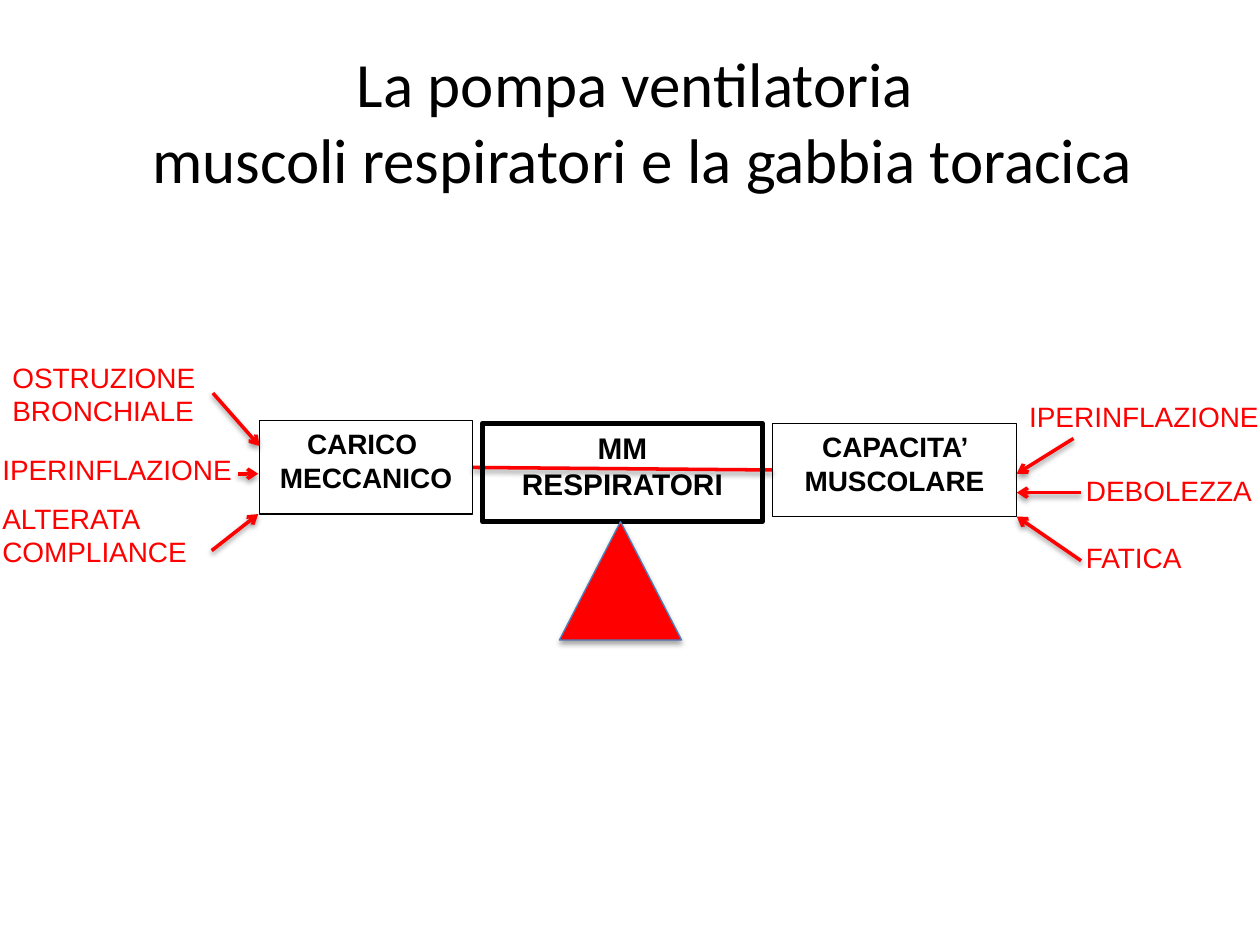
from lxml.etree import SubElement
from pptx import Presentation
from pptx.dml.color import RGBColor
from pptx.enum.shapes import MSO_CONNECTOR, MSO_SHAPE
from pptx.enum.text import MSO_ANCHOR, MSO_AUTO_SIZE, PP_ALIGN
from pptx.oxml.ns import qn
from pptx.util import Inches, Pt

BLACK = RGBColor(0x00, 0x00, 0x00)
RED = RGBColor(0xFF, 0x00, 0x00)
BLUE = RGBColor(0x4B, 0x7E, 0xBC)

TITLE = ("La pompa ventilatoria", " muscoli respiratori e la gabbia toracica")

# paragraphs, (left, top, width, height), text size, line width
BOXES = [
    (["MM RESPIRATORI"], (3.83, 3.36, 2.22, 0.78), 17, 3),
    (["CARICO ", "MECCANICO"], (2.06, 3.34, 1.69, 0.74), 16, 0.75),
    (["CAPACITA’ MUSCOLARE"], (6.13, 3.36, 1.94, 0.74), 16, 0.75),
]

# text, (left, top, width, height)
LABELS = [
    ("IPERINFLAZIONE", (-0.08, 3.54, 2.34, 0.43)),
    ("ALTERATA COMPLIANCE", (-0.08, 3.93, 2.34, 0.74)),
    ("OSTRUZIONE BRONCHIALE", (0, 2.81, 2.34, 0.74)),
    ("IPERINFLAZIONE", (8.07, 3.12, 2.14, 0.43)),
    ("DEBOLEZZA", (8.52, 3.71, 1.68, 0.43)),
    ("FATICA", (8.52, 4.24, 1.17, 0.43)),
]

BEAM = (3.75, 3.71, 6.13, 3.73)
FULCRUM = (4.44, 4.14, 0.97, 0.94)

# from x, from y, to x, to y
ARROWS = [
    (1.69, 3.12, 2.06, 3.54),
    (1.68, 4.37, 2.05, 4.08),
    (1.89, 3.76, 2.05, 3.76),
    (8.58, 3.91, 8.07, 3.91),
    (8.52, 3.48, 8.07, 3.76),
    (8.58, 4.45, 8.07, 4.10),
]


def inches(values):
    return [Inches(value) for value in values]


def add_span(para, text, size, color, font="Arial", bold=False):
    span = para.add_run()
    span.text = text
    span.font.name = font
    span.font.size = Pt(size)
    span.font.bold = bold
    span.font.color.rgb = color


def fill_frame(frame, paragraphs, size, color, align, bold=False):
    frame.word_wrap = True
    frame.vertical_anchor = MSO_ANCHOR.TOP
    for index, text in enumerate(paragraphs):
        para = frame.add_paragraph() if index else frame.paragraphs[0]
        para.alignment = align
        add_span(para, text, size, color, bold=bold)


def add_shadow(shape, opacity):
    """Soft shadow straight below; opacity in percent."""
    effects = SubElement(shape._element.spPr, qn("a:effectLst"))
    shadow = SubElement(effects, qn("a:outerShdw"), blurRad=str(Pt(3.1)),
                        dist=str(Pt(1.7)), dir="5400000", rotWithShape="0")
    color = SubElement(shadow, qn("a:srgbClr"), val=str(BLACK))
    SubElement(color, qn("a:alpha"), val=str(opacity * 1000))


def add_line(slide, ends, arrow=False):
    line = slide.shapes.add_connector(MSO_CONNECTOR.STRAIGHT, *inches(ends))
    line.line.color.rgb = RED
    line.line.width = Pt(2)
    if arrow:
        SubElement(line.line._get_or_add_ln(), qn("a:tailEnd"), type="arrow")
    add_shadow(line, 38)


def add_title(slide):
    title = slide.shapes.title
    title.left, title.top, title.width, title.height = inches((0.54, 0.33, 9, 1.25))
    frame = title.text_frame
    frame.auto_size = MSO_AUTO_SIZE.NONE
    frame.vertical_anchor = MSO_ANCHOR.MIDDLE
    para = frame.paragraphs[0]
    para.alignment = PP_ALIGN.CENTER
    for index, text in enumerate(TITLE):
        if index:
            para.add_line_break()
        add_span(para, text, 36, BLACK, font="Calibri")


def add_box(slide, paragraphs, place, size, line_width):
    box = slide.shapes.add_shape(MSO_SHAPE.RECTANGLE, *inches(place))
    box.shadow.inherit = False
    box.fill.background()
    box.line.color.rgb = BLACK
    box.line.width = Pt(line_width)
    fill_frame(box.text_frame, paragraphs, size, BLACK, PP_ALIGN.CENTER, bold=True)


def add_label(slide, text, place):
    label = slide.shapes.add_textbox(*inches(place))
    fill_frame(label.text_frame, [text], 16, RED, PP_ALIGN.LEFT)


def add_fulcrum(slide):
    fulcrum = slide.shapes.add_shape(MSO_SHAPE.ISOSCELES_TRIANGLE, *inches(FULCRUM))
    fulcrum.fill.solid()
    fulcrum.fill.fore_color.rgb = RED
    fulcrum.line.color.rgb = BLUE
    fulcrum.line.width = Pt(0.75)
    add_shadow(fulcrum, 35)


def main():
    deck = Presentation()
    deck.slide_width, deck.slide_height = Inches(10), Inches(7.5)
    slide = deck.slides.add_slide(deck.slide_layouts[5])
    add_title(slide)
    add_line(slide, BEAM)
    for box in BOXES:
        add_box(slide, *box)
    for label in LABELS:
        add_label(slide, *label)
    add_fulcrum(slide)
    for ends in ARROWS:
        add_line(slide, ends, arrow=True)
    deck.save("out.pptx")


if __name__ == "__main__":
    main()
